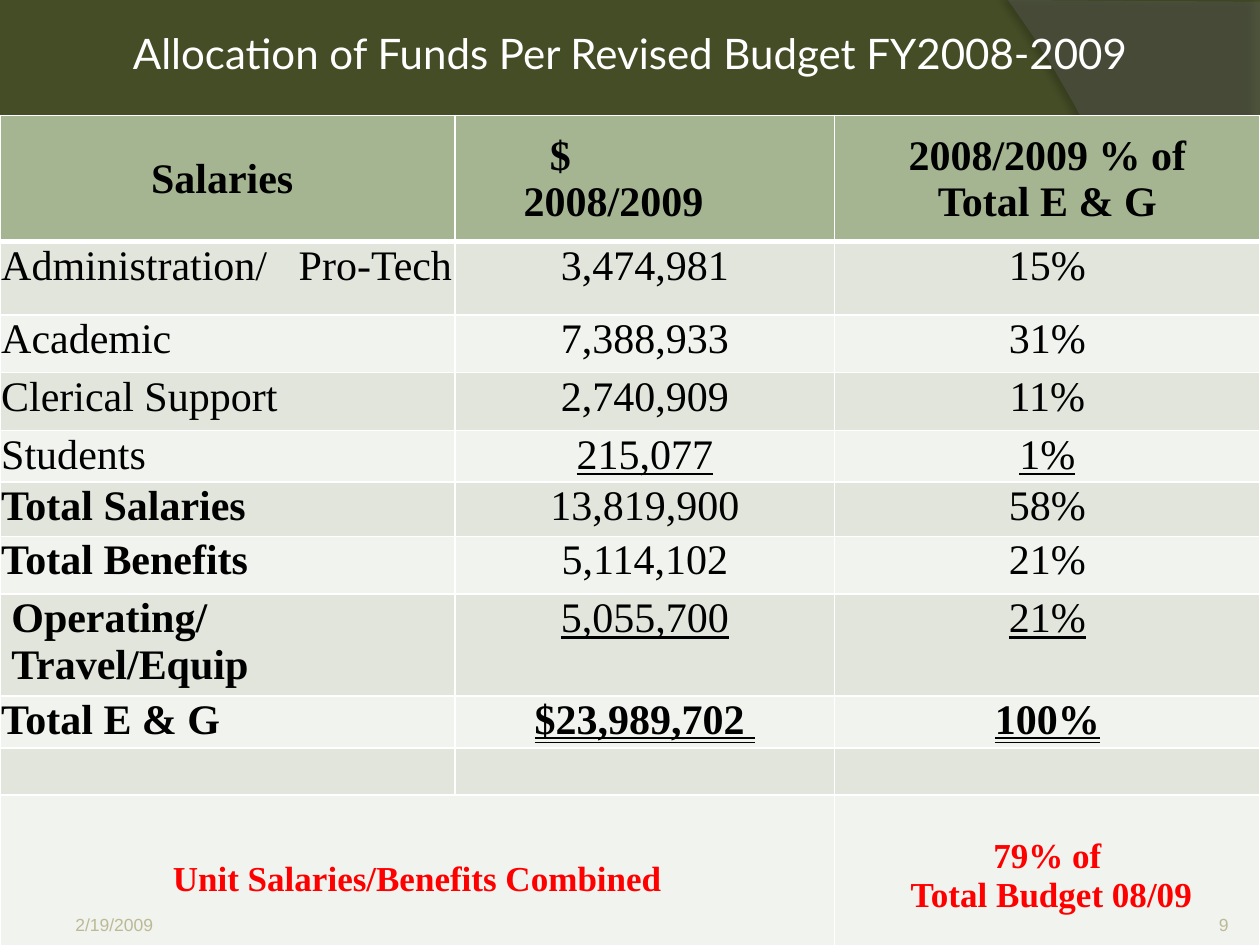
from dataclasses import dataclass

from lxml import etree
from pptx import Presentation
from pptx import util as u
from pptx.dml.color import RGBColor
from pptx.enum import text
from pptx.oxml import ns

Pt = u.Pt
LEFT, CENTER, RIGHT = text.PP_ALIGN.LEFT, text.PP_ALIGN.CENTER, text.PP_ALIGN.RIGHT
TOP, MIDDLE, BOTTOM = text.MSO_ANCHOR.TOP, text.MSO_ANCHOR.MIDDLE, text.MSO_ANCHOR.BOTTOM
DOUBLE = text.MSO_UNDERLINE.DOUBLE_LINE


@dataclass(frozen=True)
class Theme:
    background: str = "444D26"
    wave: str = "7F7F7F"
    sweep: str = "5E5E5E"
    white: str = "FFFFFF"
    ink: str = "000000"
    alert: str = "FF0000"
    muted: str = "BCB995"
    header: str = "A5B592"
    bands: tuple = ("F0F3EE", "E1E5DC")
    title_font: str = "Lato"
    table_font: str = "Times New Roman"
    footer_font: str = "Arial"
    body_size: int = 24
    summary_size: int = 20
    footer_size: int = 10


THEME = Theme()
COLUMNS = (260, 217, 243)
HEADER_HEIGHT, BLANK_HEIGHT, SUMMARY_HEIGHT = 72, 27, 96
BUDGET_ROWS = (
    (42, "Administration/\tPro-Tech", "3,474,981", "15%", False, None),
    (33, "Academic", "7,388,933", "31%", False, None),
    (33, "Clerical Support", "2,740,909", "11%", False, None),
    (27, "Students", "215,077", "1%", False, True),
    (31, "Total Salaries", "13,819,900", "58%", True, None),
    (33, "Total Benefits", "5,114,102", "21%", True, None),
    (46, "Operating/ Travel/Equip", "5,055,700", "21%", True, True),
    (29, "Total E & G", "$23,989,702 ", "100%", True, DOUBLE),
)


def add_xml(parent, tag, index=None, **attributes):
    element = etree.Element(ns.qn(tag), {key: str(value) for key, value in attributes.items()})
    parent.insert(len(parent) if index is None else index, element)
    return element


def add_run(paragraph, words, font, size, color, bold=False, underline=None):
    run = paragraph.add_run()
    run.text = words
    run.font.name, run.font.size = font, Pt(size)
    run.font.bold, run.font.underline = bold, underline
    run.font.color.rgb = RGBColor.from_string(color)


def add_label(slide, box, words, font, size, color, align, anchor, insets):
    shape = slide.shapes.add_textbox(*map(Pt, box))
    frame = shape.text_frame
    frame.word_wrap, frame.vertical_anchor = True, anchor
    (frame.margin_left, frame.margin_top,
     frame.margin_right, frame.margin_bottom) = map(Pt, insets)
    paragraph = frame.paragraphs[0]
    paragraph.alignment = align
    add_run(paragraph, words, font, size, color)


def curve(start, first, second, end, steps=32):
    for step in range(1, steps + 1):
        t = step / steps
        weights = ((1 - t) ** 3, 3 * t * (1 - t) ** 2, 3 * t * t * (1 - t), t ** 3)
        yield tuple(sum(w * point[axis] for w, point in zip(weights, (start, first, second, end)))
                    for axis in (0, 1))


def add_outline(slide, points, color, opacity, shadow):
    points = [(Pt(x), Pt(y)) for x, y in points]
    builder = slide.shapes.build_freeform(*points[0], scale=1.0)
    builder.add_line_segments(points[1:], close=True)
    shape = builder.convert_to_shape()
    shape.shadow.inherit = False
    shape.line.fill.background()
    shape.fill.solid()
    shape.fill.fore_color.rgb = RGBColor.from_string(color)
    properties = shape.element.spPr
    fill_color = properties.find(".//" + ns.qn("a:srgbClr"))
    add_xml(fill_color, "a:alpha", val=opacity * 1000)
    strength, blur, distance, angle = shadow
    outer = add_xml(properties.find(ns.qn("a:effectLst")), "a:outerShdw", blurRad=int(Pt(blur)),
                    dist=int(Pt(distance)), dir=angle * 60000, algn="ctr", rotWithShape=0)
    add_xml(add_xml(outer, "a:srgbClr", val=THEME.ink), "a:alpha", val=strength * 1000)


def style_cell(cell, fill, anchor=TOP, top=1, bottom=1):
    cell.fill.solid()
    cell.fill.fore_color.rgb = RGBColor.from_string(fill)
    cell.vertical_anchor = anchor
    cell.margin_left = cell.margin_right = cell.margin_top = Pt(0.72)
    cell.margin_bottom = 0
    properties = cell._tc.get_or_add_tcPr()
    for index, (side, width) in enumerate(zip("LRTB", (1, 1, top, bottom))):
        line = add_xml(properties, "a:ln" + side, index, w=int(Pt(width)))
        add_xml(add_xml(line, "a:solidFill"), "a:srgbClr", val=THEME.white)


def write_cell(cell, lines, align=CENTER, size=THEME.body_size, color=THEME.ink,
               bold=False, underline=None):
    frame = cell.text_frame
    for index, words in enumerate(lines):
        paragraph = frame.add_paragraph() if index else frame.paragraphs[0]
        paragraph.alignment = align
        add_run(paragraph, words, THEME.table_font, size, color, bold, underline)


def indent_lines(cell, margins):
    for paragraph, margin in zip(cell.text_frame.paragraphs, margins):
        paragraph._p.get_or_add_pPr().set("marL", str(int(Pt(margin))))


def add_budget_table(slide):
    heights = [HEADER_HEIGHT, *(row[0] for row in BUDGET_ROWS), BLANK_HEIGHT, SUMMARY_HEIGHT]
    table = slide.shapes.add_table(len(heights), len(COLUMNS), 0, Pt(66),
                                   Pt(sum(COLUMNS)), Pt(sum(heights))).table
    for column, width in zip(table.columns, COLUMNS):
        column.width = Pt(width)
    for index, (row, height) in enumerate(zip(table.rows, heights)):
        row.height = Pt(height)
        for cell in row.cells:
            if index == 0:
                style_cell(cell, THEME.header, MIDDLE, bottom=3)
            else:
                style_cell(cell, THEME.bands[index % 2], top=3 if index == 1 else 1)

    write_cell(table.cell(0, 0), ["Salaries "], bold=True)
    write_cell(table.cell(0, 1), ["$", "2008/2009"], LEFT, bold=True)
    indent_lines(table.cell(0, 1), (53.5, 38.5))
    write_cell(table.cell(0, 2), ["2008/2009 % of", "Total E & G"], bold=True)

    for index, (_, label, amount, share, strong, underline) in enumerate(BUDGET_ROWS, 1):
        write_cell(table.cell(index, 0), [label], LEFT, bold=strong)
        for column, figure in ((1, amount), (2, share)):
            write_cell(table.cell(index, column), [figure],
                       bold=underline is DOUBLE, underline=underline)

    first_label = table.cell(1, 0).text_frame.paragraphs[0]
    tabs = add_xml(first_label._p.get_or_add_pPr(), "a:tabLst")
    add_xml(tabs, "a:tab", pos=int(Pt(170)), algn="l")
    operating = table.cell(7, 0)
    operating.margin_left = operating.margin_right = Pt(6.5)

    last = len(heights) - 1
    combined, share = table.cell(last, 0), table.cell(last, 2)
    combined.merge(table.cell(last, 1))
    combined.vertical_anchor = MIDDLE
    share.margin_top = Pt(24)
    for cell, lines in ((combined, ["Unit Salaries/Benefits Combined"]),
                        (share, ["79% of", " Total Budget 08/09"])):
        write_cell(cell, lines, size=THEME.summary_size, color=THEME.alert, bold=True)


def main():
    presentation = Presentation()
    presentation.slide_width, presentation.slide_height = Pt(720), Pt(540)
    slide = presentation.slides.add_slide(presentation.slide_layouts[6])
    slide.background.fill.solid()
    slide.background.fill.fore_color.rgb = RGBColor.from_string(THEME.background)

    wave = [(0, 508), (0, 540), (720, 540), (720, 374),
            *curve((720, 374), (402, 525), (282, 518), (0, 508))]
    sweep = [(720, 1), (720, 540), (591, 540),
             *curve((591, 540), (673, 446), (733, 216), (576, 0))]
    add_outline(slide, wave, THEME.wave, 45, (35, 4, 3.5, 270))
    add_outline(slide, sweep, THEME.sweep, 40, (45, 4, 4, 180))

    add_label(slide, (0, 0, 720, 60), "Allocation of Funds Per Revised Budget FY2008-2009",
              THEME.title_font, THEME.body_size, THEME.white, CENTER, MIDDLE, (3.6,) * 4)
    add_budget_table(slide)
    footer = THEME.footer_font, THEME.footer_size, THEME.muted
    add_label(slide, (36, 505.5, 168, 28.8), "2/19/2009", *footer, LEFT, BOTTOM, (7.2, 3.6, 7.2, 0))
    add_label(slide, (642, 505.5, 60, 28.8), "9", *footer, RIGHT, BOTTOM, (0,) * 4)
    presentation.save("out.pptx")


if __name__ == "__main__":
    main()
